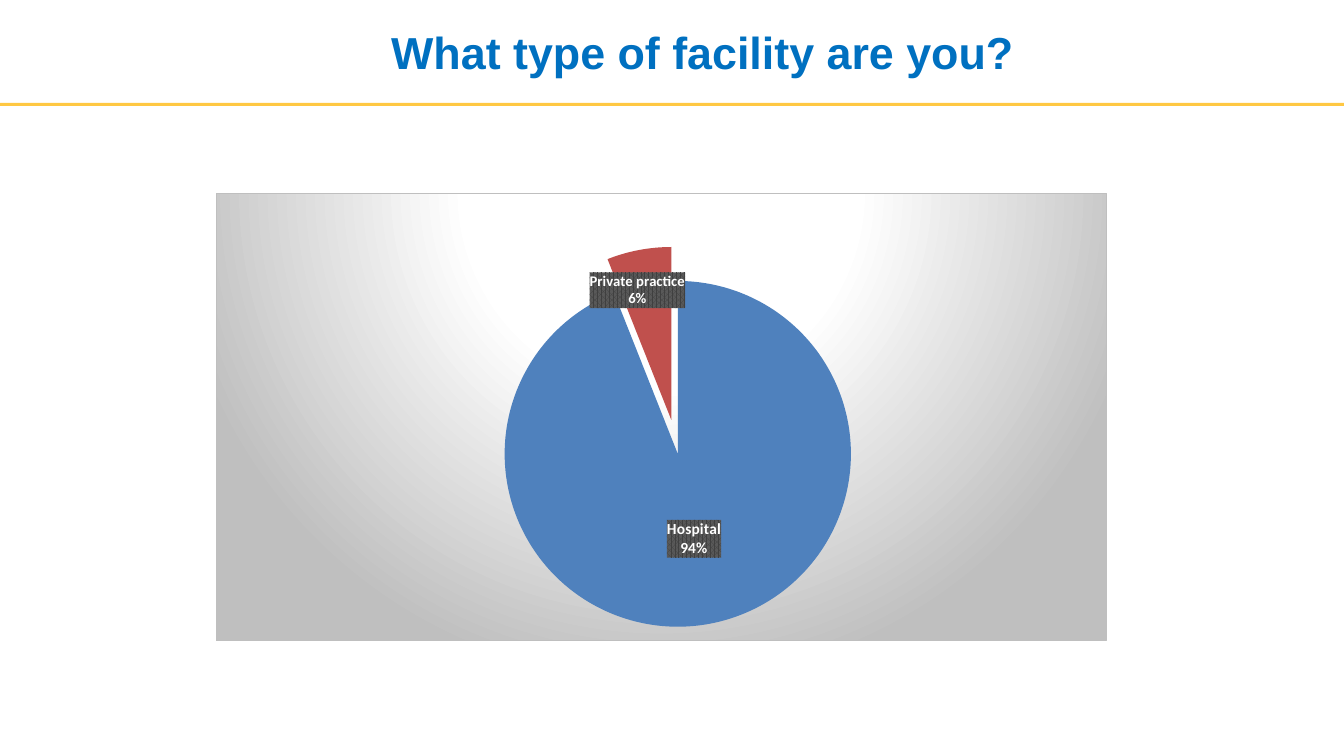
from lxml import etree
from pptx import Presentation
from pptx.chart.data import CategoryChartData
from pptx.dml.color import RGBColor
from pptx.enum.chart import XL_CHART_TYPE
from pptx.enum.shapes import MSO_SHAPE
from pptx.enum.text import MSO_ANCHOR, PP_ALIGN
from pptx.oxml import parse_xml
from pptx.oxml.ns import nsdecls, qn
from pptx.util import Inches, Pt

COLOURS = {
    "title": "0070C0", "rule": "FFC843", "text": "000000", "label": "FFFFFF",
    "hospital": "4F81BD", "practice": "C0504D",
    "glow": "FFFFFF", "shade": "BFBFBF",
    "hatch": "404040", "hatch_back": "595959",
}
FACILITIES = [
    # name, percent, colour, label size, label shift as shares of the chart
    ("Hospital", 94, "hospital", 11, (0, 0)),
    ("Private practice", 6, "practice", 10.5, (-0.02, -0.1)),
]
NAMESPACES = nsdecls("c", "a")


def solid(name):
    return f'<a:solidFill><a:srgbClr val="{COLOURS[name]}"/></a:solidFill>'


def manual_layout(**values):
    parts = "".join(f'<c:{key} val="{value}"/>' for key, value in values.items())
    return f"<c:layout {NAMESPACES}><c:manualLayout>{parts}</c:manualLayout></c:layout>"


def label_flags():
    """Show the category name and the percentage, on separate lines."""
    flags = {"LegendKey": 0, "Val": 0, "CatName": 1, "SerName": 0, "Percent": 1, "BubbleSize": 0}
    shown = "".join(f'<c:show{key} val="{value}"/>' for key, value in flags.items())
    return f'<c:dLblPos val="ctr"/>{shown}<c:separator>\n</c:separator>'


def point_label(index, size, shift):
    layout = manual_layout(x=shift[0], y=shift[1]) if any(shift) else ""
    return f"""<c:dLbl><c:idx val="{index}"/>{layout}
        <c:numFmt formatCode="0%" sourceLinked="0"/>
        <c:spPr><a:pattFill prst="pct75">
          <a:fgClr><a:srgbClr val="{COLOURS['hatch']}"/></a:fgClr>
          <a:bgClr><a:srgbClr val="{COLOURS['hatch_back']}"/></a:bgClr>
        </a:pattFill><a:ln><a:noFill/></a:ln></c:spPr>
        <c:txPr><a:bodyPr/><a:p><a:pPr><a:defRPr sz="{int(size * 100)}" b="1">
          {solid('label')}<a:latin typeface="Calibri"/>
        </a:defRPr></a:pPr><a:endParaRPr lang="en-US"/></a:p></c:txPr>
        {label_flags()}</c:dLbl>"""


def chart_background():
    stops = "".join(
        f'<a:gs pos="{share * 1000}"><a:srgbClr val="{COLOURS[name]}"/></a:gs>'
        for share, name in ((0, "glow"), (39, "glow"), (100, "shade")))
    return f"""<c:spPr {NAMESPACES}>
        <a:gradFill><a:gsLst>{stops}</a:gsLst><a:path path="circle">
          <a:fillToRect l="50000" t="-80000" r="50000" b="180000"/>
        </a:path></a:gradFill>
        <a:ln w="{Pt(0.75)}">{solid('shade')}</a:ln></c:spPr>"""


class SlideBuilder:
    width, height = Inches(13.33), Inches(7.5)

    def __init__(self):
        self.deck = Presentation()
        self.deck.slide_width, self.deck.slide_height = self.width, self.height
        self.page = self.deck.slides.add_slide(self.deck.slide_layouts[5])

    def place(self, left, top, width, height):
        """Turn shares of the slide's size into lengths."""
        return (int(left * self.width), int(top * self.height),
                int(width * self.width), int(height * self.height))

    def colour(self, name):
        return RGBColor.from_string(COLOURS[name])

    def title(self, text, *shares):
        box = self.page.shapes.title
        box.left, box.top, box.width, box.height = self.place(*shares)
        box.text_frame.text = text
        box.text_frame.vertical_anchor = MSO_ANCHOR.MIDDLE
        para = box.text_frame.paragraphs[0]
        para.alignment = PP_ALIGN.LEFT
        para.font.name, para.font.size, para.font.bold = "Arial", Pt(32), True
        para.font.color.rgb = self.colour("title")

    def rule(self, *shares):
        bar = self.page.shapes.add_shape(MSO_SHAPE.RECTANGLE, *self.place(*shares))
        bar.shadow.inherit = False
        bar.fill.solid()
        bar.fill.fore_color.rgb = self.colour("rule")
        bar.line.fill.background()

    def pie(self, facilities, *shares):
        data = CategoryChartData(number_format="0")
        data.categories = [facility[0] for facility in facilities]
        data.add_series("Series 1", [facility[1] for facility in facilities])
        chart = self.page.shapes.add_chart(
            XL_CHART_TYPE.PIE, *self.place(*shares), data).chart
        chart.has_title = chart.has_legend = False
        chart.font.name, chart.font.size = "Calibri", Pt(10)
        chart.font.color.rgb = self.colour("text")

        series = chart.plots[0].series[0]
        labels = ""
        for index, (_, _, colour, size, shift) in enumerate(facilities):
            fill = series.points[index].format.fill
            fill.solid()
            fill.fore_color.rgb = self.colour(colour)
            labels += point_label(index, size, shift)

        node = series._element
        explosion = etree.Element(qn("c:explosion"), val="10")
        node.find(qn("c:tx")).addnext(explosion)
        node.find(qn("c:cat")).addprevious(
            parse_xml(f"<c:dLbls {NAMESPACES}>{labels}{label_flags()}</c:dLbls>"))

        chart_node = chart._chartSpace.find(qn("c:chart"))
        chart_node.addnext(parse_xml(chart_background()))
        plot_area = chart_node.find(qn("c:plotArea"))
        for layout in plot_area.findall(qn("c:layout")):
            plot_area.remove(layout)
        plot_area.insert(0, parse_xml(manual_layout(
            layoutTarget="inner", xMode="edge", yMode="edge",
            x=0.3, y=0.12, w=0.43, h=0.85)))


def main():
    builder = SlideBuilder()
    builder.rule(0, 0.136, 1, 0.004)
    builder.title("What type of facility are you?", 0.2836, 0, 0.65, 0.136)
    builder.pie(FACILITIES, 0.1605, 0.2547, 0.663, 0.5933)
    builder.deck.save("out.pptx")


if __name__ == "__main__":
    main()
